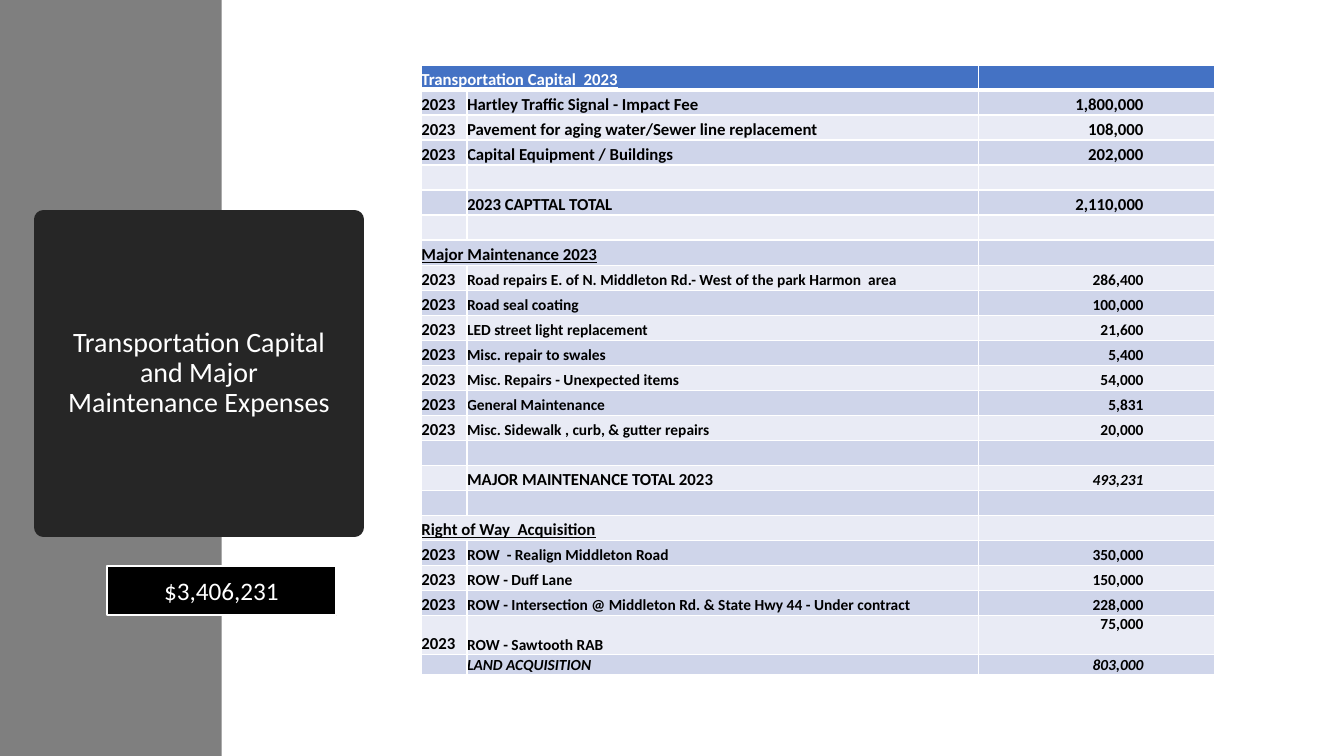
from lxml.etree import SubElement
from pptx import Presentation
from pptx.dml.color import RGBColor
from pptx.enum.shapes import MSO_SHAPE as Shape
from pptx.enum.text import MSO_ANCHOR as Anchor, PP_ALIGN as Align
from pptx.oxml.ns import qn
from pptx.util import Cm, Pt

BANDS = ("E9EBF5", "CFD5EA")
CAPITAL_ROWS = [
    ("2023", "Hartley Traffic Signal - Impact Fee", "1,800,000"),
    ("2023", "Pavement for aging water/Sewer line replacement", "108,000"),
    ("2023", "Capital Equipment / Buildings", "202,000"),
    ("", "", ""),
    ("", "2023 CAPTTAL TOTAL", "2,110,000"),
    ("", "", ""),
]
MAINTENANCE_ROWS = [
    ("2023", "Road repairs E. of N. Middleton Rd.- West of the park Harmon  area", "286,400"),
    ("2023", "Road seal coating", "100,000"),
    ("2023", "LED street light replacement", "21,600"),
    ("2023", "Misc. repair to swales", "5,400"),
    ("2023", "Misc. Repairs - Unexpected items", "54,000"),
    ("2023", "General Maintenance", "5,831"),
    ("2023", "Misc. Sidewalk , curb, & gutter repairs", "20,000"),
    ("", "", ""),
    ("", "MAJOR MAINTENANCE TOTAL 2023", "493,231"),
    ("", "", ""),
]
LAND_ROWS = [
    ("2023", "ROW  - Realign Middleton Road", "350,000"),
    ("2023", "ROW - Duff Lane", "150,000"),
    ("2023", "ROW - Intersection @ Middleton Rd. & State Hwy 44 - Under contract", "228,000"),
    ("2023", "ROW - Sawtooth RAB", "75,000"),
    ("", "LAND ACQUISITION", "803,000"),
]
SECTIONS = [
    ("Transportation Capital  2023", 12, CAPITAL_ROWS),
    ("Major Maintenance 2023", 11, MAINTENANCE_ROWS),
    ("Right of Way  Acquisition", 11, LAND_ROWS),
]
ITALIC_TEXTS = ("493,231", "LAND ACQUISITION", "803,000")


def color(value):
    """Turn a hex string into a colour."""
    return RGBColor.from_string(value)


def place(shape, left, top, width, height):
    """Set a shape's position and size in centimetres."""
    shape.left, shape.top = Cm(left), Cm(top)
    shape.width, shape.height = Cm(width), Cm(height)


def paint(shape, fill, line=None, weight=1):
    """Fill a shape and draw or remove its outline."""
    shape.fill.solid()
    shape.fill.fore_color.rgb = color(fill)
    if line:
        shape.line.color.rgb = color(line)
        shape.line.width = Pt(weight)
    else:
        shape.line.fill.background()


def add_span(para, text, size, ink, bold=False, italic=False, underline=False):
    """Add one formatted run to a paragraph."""
    span = para.add_run()
    span.text = text
    font = span.font
    font.name, font.size, font.color.rgb = "Calibri", Pt(size), color(ink)
    font.bold, font.italic, font.underline = bold, italic, underline


def add_box(slide, bounds, fill, line=None, weight=1):
    """Add a plain rectangle."""
    box = slide.shapes.add_shape(Shape.RECTANGLE, *[Cm(length) for length in bounds])
    box.shadow.inherit = False
    paint(box, fill, line, weight)
    return box


def write_centered(box, text, size):
    """Write white text in the middle of a shape."""
    frame = box.text_frame
    frame.word_wrap = True
    frame.vertical_anchor = Anchor.MIDDLE
    para = frame.paragraphs[0]
    para.alignment = Align.CENTER
    add_span(para, text, size, "FFFFFF")
    return para


def format_title(title):
    """Turn the title placeholder into a dark circle."""
    place(title, 1.09, 5.54, 7.85, 7.74)
    SubElement(title.element.spPr, qn("a:prstGeom"), prst="ellipse")
    paint(title, "262626", "262626", 13.75)
    title.text_frame.margin_left = title.text_frame.margin_right = Cm(0.5)
    para = write_centered(title, "Transportation Capital and Major Maintenance Expenses", 20)
    para.line_spacing = 0.9


def add_border(cell, side, weight):
    """Draw one white cell edge."""
    edge = SubElement(cell._tc.get_or_add_tcPr(), qn("a:" + side), w=str(Pt(weight)))
    fill = SubElement(edge, qn("a:solidFill"))
    SubElement(fill, qn("a:srgbClr"), val="FFFFFF")


def format_cell(cell, fill, header):
    """Set a cell's edges, fill, margins and anchor."""
    for side in ("lnL", "lnR", "lnT", "lnB"):
        add_border(cell, side, 3 if header and side == "lnB" else 1)
    cell.fill.solid()
    cell.fill.fore_color.rgb = color(fill)
    cell.margin_left = cell.margin_right = cell.margin_top = cell.margin_bottom = 0
    cell.vertical_anchor = Anchor.BOTTOM


def write_cell(cell, text, size, ink="000000", underline=False):
    """Write bold table text, or size the empty paragraph."""
    para = cell.text_frame.paragraphs[0]
    if text:
        add_span(para, text, size, ink, True, text in ITALIC_TEXTS, underline)
    else:
        SubElement(para._p, qn("a:endParaRPr"), sz=str(size * 100))


def fill_row(table, index, texts, size, heading):
    """Format and write one table row."""
    header = index == 0
    cells = [table.cell(index, column) for column in range(3)]
    if heading:
        cells[0].merge(cells[1])
    for cell in cells:
        format_cell(cell, "4472C4" if header else BANDS[index % 2], header)
    total = "TOTAL" in texts[1]
    sizes = (12, 12 if total else size, size)
    for cell, text, text_size in zip(cells, texts, sizes):
        write_cell(cell, text, text_size, "FFFFFF" if header else "000000", heading)
    cells[2].text_frame.paragraphs[0].alignment = Align.RIGHT
    cells[2].margin_right = Cm(1.8)


def add_expenses(slide):
    """Add the table of expenses."""
    rows = []
    for heading, size, items in SECTIONS:
        rows.append(((heading, "", ""), size, True))
        rows += [(item, size, False) for item in items]
    frame = slide.shapes.add_table(len(rows), 3, Cm(10.62), Cm(1.64), Cm(20), Cm(15.3))
    table = frame.table
    table.horz_banding = False
    for column, width in zip(table.columns, (1.15, 12.88, 5.97)):
        column.width = Cm(width)
    for index, (texts, size, heading) in enumerate(rows):
        table.rows[index].height = Cm(0.63)
        fill_row(table, index, texts, size, heading)
    last = len(rows) - 1
    table.rows[last - 1].height = Cm(0.99)
    table.rows[last].height = Cm(0.48)
    table.cell(last - 1, 2).vertical_anchor = Anchor.TOP


def main():
    """Build and save the slide."""
    deck = Presentation()
    deck.slide_width, deck.slide_height = Cm(33.87), Cm(19.05)
    slide = deck.slides.add_slide(deck.slide_layouts[5])
    sidebar = add_box(slide, (0, 0, 5.59, 19.05), "7F7F7F")
    slide.shapes.title.element.addprevious(sidebar.element)
    format_title(slide.shapes.title)
    add_expenses(slide)
    total = add_box(slide, (2.69, 14.27, 5.79, 1.24), "000000", "FFFFFF", 1.5)
    write_centered(total, "$3,406,231", 18)
    deck.save("out.pptx")


if __name__ == "__main__":
    main()
